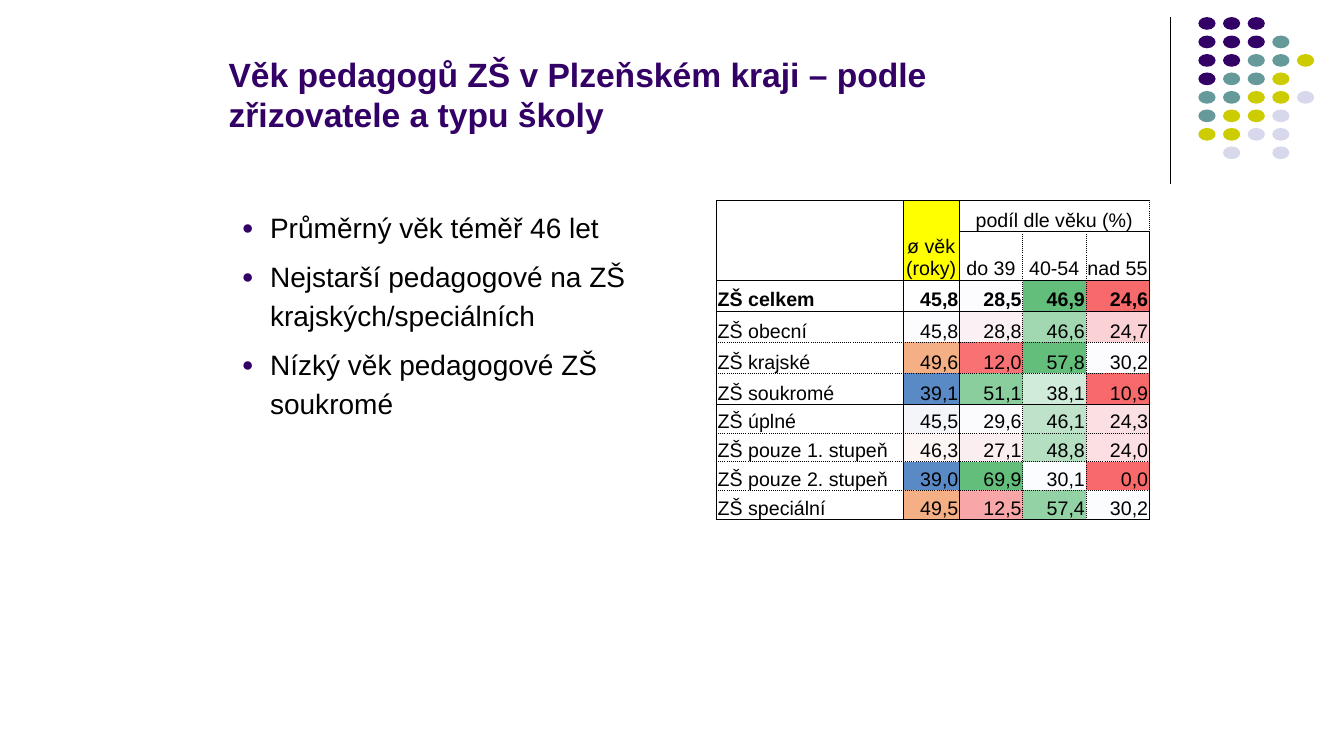
from lxml.etree import SubElement
from pptx import Presentation
from pptx.dml.color import RGBColor
from pptx.enum.shapes import MSO_CONNECTOR as Connector, MSO_SHAPE as Shape
from pptx.enum.text import MSO_ANCHOR as Anchor, PP_ALIGN as Align
from pptx.oxml.ns import qn
from pptx.util import Pt

FONT = "Arial"
COLORS = {
    "black": "000000", "purple": "330066", "teal": "669999",
    "lime": "CCCC00", "lilac": "D8D8EC", "yellow": "FFFF00",
}

# Corner dots: one letter per dot, a space where there is none
DOT_ROWS = ["PPP", "PPPT", "PPTTL", "PTTL", "TTLLG", "TLLG", "LLGG", " G G"]
DOT_COLORS = {"P": "purple", "T": "teal", "L": "lime", "G": "lilac"}

TITLE = "Věk pedagogů ZŠ v Plzeňském kraji – podle zřizovatele a typu školy"
POINTS = [
    "Průměrný věk téměř 46 let",
    "Nejstarší pedagogové na ZŠ krajských/speciálních",
    "Nízký věk pedagogové ZŠ soukromé",
]

# Table: label, values, and the heat colour of each value
COLUMN_WIDTHS = [133.2, 40.2, 45.2, 45.2, 45.2]
ROW_HEIGHTS = [22.3] * 6 + [20.4] * 3 + [21]
SOLID_BELOW = {0, 1, 2, 5, 9}
AGE_GROUPS = ["do 39", "40-54", "nad 55"]
SCHOOLS = [
    ("ZŠ celkem", "45,8 28,5 46,9 24,6", [None, "FCFCFF", "63BE7B", "F8696B"]),
    ("ZŠ obecní", "45,8 28,8 46,6 24,7", ["FCFCFF", "FBF0F3", "A2D8B1", "FAD1D4"]),
    ("ZŠ krajské", "49,6 12,0 57,8 30,2", ["F4B084", "F87173", "63BE7B", "FCFCFF"]),
    ("ZŠ soukromé", "39,1 51,1 38,1 10,9", ["5A8AC6", "89CE9C", "D1EBDA", "F8696B"]),
    ("ZŠ úplné", "45,5 29,6 46,1 24,3", ["F3F5FB", "FBFAFD", "BEE3CA", "FBE0E3"]),
    ("ZŠ pouze 1. stupeň", "46,3 27,1 48,8 24,0", ["FCF5F3", "FBEEF1", "B4DFC1", "FBDFE2"]),
    ("ZŠ pouze 2. stupeň", "39,0 69,9 30,1 0,0", ["5A8AC6", "63BE7B", "FBFCFF", "F8696B"]),
    ("ZŠ speciální", "49,5 12,5 57,4 30,2", ["F4B084", "F9A6A8", "93D2A5", "FBFCFE"]),
]


def rgb(name):
    return RGBColor.from_string(COLORS[name])


def style_font(para, size, color="black", bold=False):
    font = para.font
    font.name, font.size, font.bold = FONT, Pt(size), bold
    font.color.rgb = rgb(color)


def add_divider(page, x, top, bottom):
    line = page.shapes.add_connector(Connector.STRAIGHT, Pt(x), Pt(top), Pt(x), Pt(bottom))
    line.line.color.rgb = rgb("black")
    line.line.width = Pt(0.75)
    SubElement(line._element.spPr, qn("a:effectLst"))


def add_dots(page):
    group = page.shapes.add_group_shape()
    for row, letters in enumerate(DOT_ROWS):
        for column, letter in enumerate(letters):
            if letter == " ":
                continue
            dot = group.shapes.add_shape(Shape.OVAL, Pt(856 + 17.6 * column),
                                         Pt(12.2 + 13.2 * row), Pt(12.3), Pt(9.1))
            dot.shadow.inherit = False
            dot.fill.solid()
            dot.fill.fore_color.rgb = rgb(DOT_COLORS[letter])
            dot.line.fill.background()


def add_text_frame(page, left, top, width, height, anchor):
    box = page.shapes.add_textbox(Pt(left), Pt(top), Pt(width), Pt(height))
    frame = box.text_frame
    frame.word_wrap = True
    frame.vertical_anchor = anchor
    return frame


def add_title(page):
    frame = add_text_frame(page, 156.2, 0, 566.6, 99.4, Anchor.BOTTOM)
    para = frame.paragraphs[0]
    para.text = TITLE
    style_font(para, 24, "purple", bold=True)


def set_bullet(para):
    properties = para._p.get_or_add_pPr()
    properties.set("marL", str(Pt(20.2)))
    properties.set("indent", str(-Pt(20.2)))
    color = SubElement(properties, qn("a:buClr"))
    SubElement(color, qn("a:srgbClr"), val=COLORS["purple"])
    SubElement(properties, qn("a:buSzPct"), val="70000")
    SubElement(properties, qn("a:buFont"), typeface=FONT)
    SubElement(properties, qn("a:buChar"), char="●")


def add_points(page):
    frame = add_text_frame(page, 165.6, 143.3, 346.3, 346.3, Anchor.TOP)
    for index, point in enumerate(POINTS):
        para = frame.add_paragraph() if index else frame.paragraphs[0]
        para.text = point
        para.line_spacing = 1.15
        para.space_before = Pt(7.5)
        set_bullet(para)
        style_font(para, 20)


def set_borders(cell, row, column):
    last = len(COLUMN_WIDTHS) - 1
    edges = {
        "L": (1 if column == 0 else 0.5, column > 2),
        "R": (1 if column == last else 0.5, 2 <= column < last),
        "T": (1 if row == 0 else 0.5, row > 0 and row - 1 not in SOLID_BELOW),
        "B": (0.5, row not in SOLID_BELOW),
    }
    properties = cell._tc.get_or_add_tcPr()
    for position, (side, (width, dotted)) in enumerate(edges.items()):
        line = properties.makeelement(qn(f"a:ln{side}"), {"w": str(Pt(width))})
        properties.insert(position, line)
        fill = SubElement(line, qn("a:solidFill"))
        SubElement(fill, qn("a:srgbClr"), val=COLORS["black"])
        SubElement(line, qn("a:prstDash"), val="sysDot" if dotted else "solid")


def fill_cell(cell, text, align, fill=None, bold=False):
    cell.text = text
    para = cell.text_frame.paragraphs[0]
    para.alignment = align
    style_font(para, 14, bold=bold)
    if fill:
        cell.fill.solid()
        cell.fill.fore_color.rgb = RGBColor.from_string(fill)


def add_age_table(page):
    frame = page.shapes.add_table(len(ROW_HEIGHTS), len(COLUMN_WIDTHS), Pt(511.9), Pt(143.3),
                                  Pt(sum(COLUMN_WIDTHS)), Pt(sum(ROW_HEIGHTS)))
    table = frame.table
    table.first_row = table.horz_banding = False
    for column, width in zip(table.columns, COLUMN_WIDTHS):
        column.width = Pt(width)
    for row, height in zip(table.rows, ROW_HEIGHTS):
        row.height = Pt(height)

    # Plain cells with solid or dotted rules
    for row in range(len(ROW_HEIGHTS)):
        for column in range(len(COLUMN_WIDTHS)):
            cell = table.cell(row, column)
            cell.margin_left = cell.margin_top = cell.margin_right = Pt(0.7)
            cell.margin_bottom = 0
            cell.vertical_anchor = Anchor.BOTTOM
            cell.fill.background()
            fill_cell(cell, "", Align.LEFT)
            set_borders(cell, row, column)

    # Header
    table.cell(0, 0).merge(table.cell(1, 0))
    table.cell(0, 1).merge(table.cell(1, 1))
    table.cell(0, 2).merge(table.cell(0, 4))
    fill_cell(table.cell(0, 1), "ø věk (roky)", Align.CENTER, COLORS["yellow"])
    fill_cell(table.cell(0, 2), "podíl dle věku (%)", Align.CENTER)
    for column, group in enumerate(AGE_GROUPS, 2):
        fill_cell(table.cell(1, column), group, Align.CENTER)

    # Schools, the total in bold
    for row, (school, values, heat) in enumerate(SCHOOLS, 2):
        bold = row == 2
        fill_cell(table.cell(row, 0), school, Align.LEFT, bold=bold)
        for column, (value, fill) in enumerate(zip(values.split(), heat), 1):
            fill_cell(table.cell(row, column), value, Align.RIGHT, fill, bold)


def main():
    deck = Presentation()
    deck.slide_width, deck.slide_height = Pt(960), Pt(540)
    page = deck.slides.add_slide(deck.slide_layouts[6])
    add_divider(page, 835.9, 12.2, 131.8)
    add_dots(page)
    add_title(page)
    add_points(page)
    add_age_table(page)
    deck.save("out.pptx")


if __name__ == "__main__":
    main()
